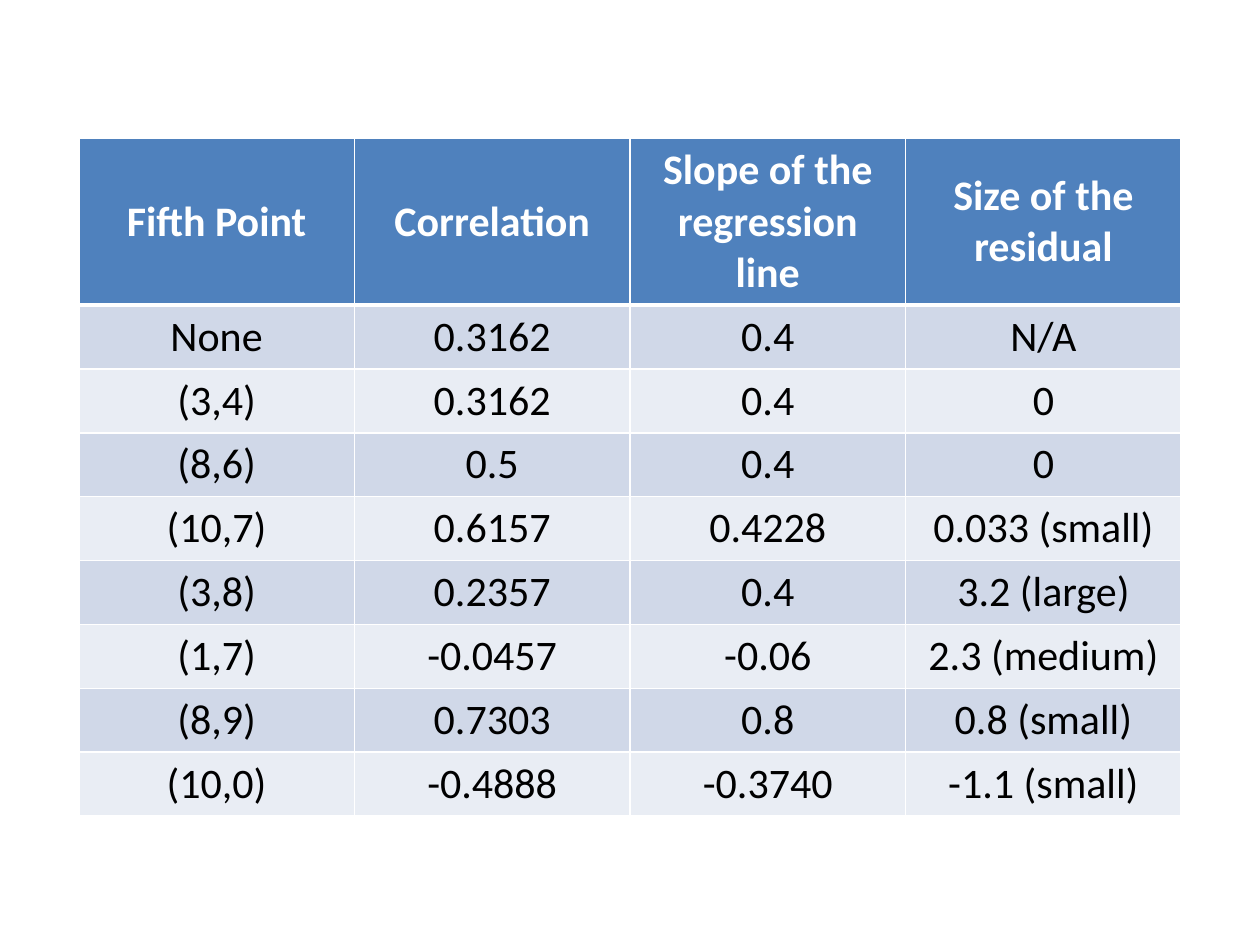
from lxml.etree import SubElement
from pptx import Presentation
from pptx.dml.color import RGBColor
from pptx.enum.text import MSO_ANCHOR, PP_ALIGN
from pptx.oxml.ns import qn
from pptx.util import Inches, Pt

WHITE = RGBColor(0xFF, 0xFF, 0xFF)
BLACK = RGBColor(0x00, 0x00, 0x00)
HEADER_BLUE = RGBColor(0x4F, 0x81, 0xBD)
BANDS = (RGBColor(0xD0, 0xD8, 0xE8), RGBColor(0xE9, 0xED, 0xF4))

HEADINGS = ("Fifth Point", "Correlation", "Slope of the regression line", "Size of the residual")
POINTS = (
    ("None", "0.3162", "0.4", "N/A"),
    ("(3,4)", "0.3162", "0.4", "0"),
    ("(8,6)", "0.5", "0.4", "0"),
    ("(10,7)", "0.6157", "0.4228", "0.033 (small)"),
    ("(3,8)", "0.2357", "0.4", "3.2 (large)"),
    ("(1,7)", "-0.0457", "-0.06", "2.3 (medium)"),
    ("(8,9)", "0.7303", "0.8", "0.8 (small)"),
    ("(10,0)", "-0.4888", "-0.3740", "-1.1 (small)"),
)


class SlideBuilder:
    """Draws on a grid of 16 columns and 75 rows."""

    font, size = "Calibri", Pt(24)
    rule, heavy_rule = Pt(1), Pt(3)

    def __init__(self, deck):
        self.slide = deck.slides.add_slide(deck.slide_layouts[6])
        self.column = deck.slide_width / 16
        self.row = deck.slide_height / 75

    def table(self, left, top, width, header_height, body_height, headings, body):
        height = header_height + body_height * len(body)
        grid = self.slide.shapes.add_table(
            len(body) + 1, len(headings),
            round(left * self.column), round(top * self.row),
            round(width * self.column), round(height * self.row),
        ).table

        # Header row is taller than the equal body rows
        for index, table_row in enumerate(grid.rows):
            table_row.height = round((body_height if index else header_height) * self.row)

        for r, values in enumerate((headings, *body)):
            is_header = r == 0
            fill = HEADER_BLUE if is_header else BANDS[(r - 1) % 2]
            for c, value in enumerate(values):
                cell = grid.cell(r, c)
                self.cell_borders(
                    cell,
                    top=self.heavy_rule if r == 1 else self.rule,
                    bottom=self.heavy_rule if is_header else self.rule,
                )
                cell.fill.solid()
                cell.fill.fore_color.rgb = fill
                self.cell_text(cell, value, WHITE if is_header else BLACK, is_header)

    def cell_text(self, cell, value, color, bold):
        cell.vertical_anchor = MSO_ANCHOR.MIDDLE
        paragraph = cell.text_frame.paragraphs[0]
        paragraph.alignment = PP_ALIGN.CENTER
        run = paragraph.add_run()
        run.text = value
        run.font.name, run.font.size = self.font, self.size
        run.font.bold = bold
        run.font.color.rgb = color

    def cell_borders(self, cell, top, bottom):
        properties = cell._tc.get_or_add_tcPr()
        sides = {"lnL": self.rule, "lnR": self.rule, "lnT": top, "lnB": bottom}
        for side, width in sides.items():
            line = SubElement(properties, qn(f"a:{side}"), w=str(width))
            solid = SubElement(line, qn("a:solidFill"))
            SubElement(solid, qn("a:srgbClr"), val=str(WHITE))


def main():
    deck = Presentation()
    deck.slide_width, deck.slide_height = Inches(10), Inches(7.5)

    # Effect of a fifth point on the regression
    SlideBuilder(deck).table(
        left=1, top=11, width=14, header_height=13, body_height=5,
        headings=HEADINGS, body=POINTS,
    )
    deck.save("out.pptx")


if __name__ == "__main__":
    main()
